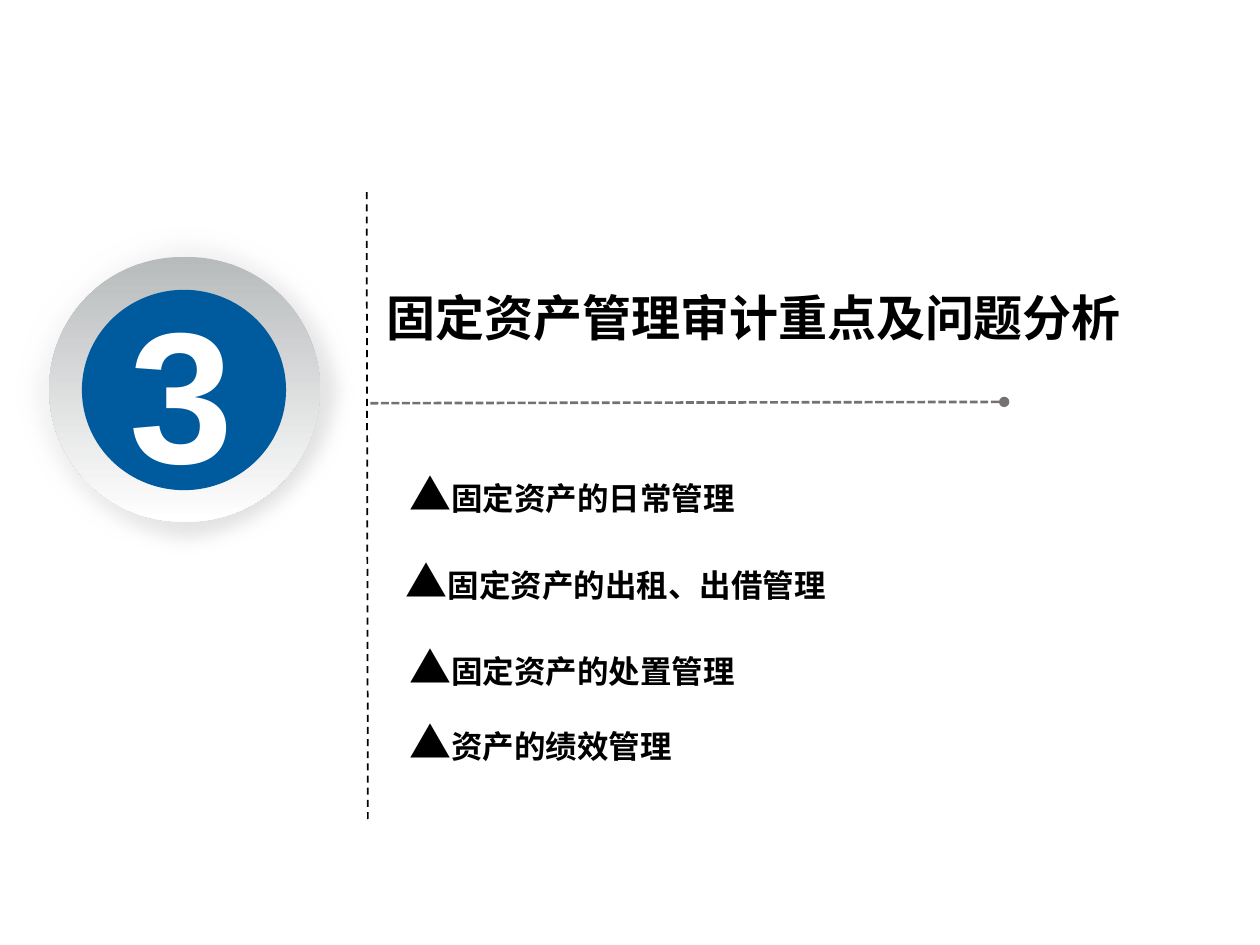
from lxml.etree import SubElement
from pptx import Presentation
from pptx.dml.color import RGBColor
from pptx.enum.dml import MSO_LINE as DASH
from pptx.enum.shapes import MSO_CONNECTOR as CONN, MSO_SHAPE as SHAPE
from pptx.enum.text import MSO_ANCHOR, MSO_AUTO_SIZE, PP_ALIGN
from pptx.oxml.ns import qn
from pptx.util import Emu, Pt

PX = 9144  # 100 px to the inch
THEME = {
    "black": "000000", "white": "FFFFFF", "blue": "005A9E", "grey": "767171",
    "halo": "D9D9D9", "ring": "B8BBBC",
    "latin": "Arial", "cjk": "Noto Sans CJK SC",
    "number": 106.7, "title": 28, "marker": 24, "item": 18,
}


def px(*lengths):
    return [Emu(n * PX) for n in lengths]


def write(sp, box, inset, runs, spacing=None):
    """Place a text shape and fill its one paragraph with (text, size, font, colour, bold) runs."""
    sp.left, sp.top, sp.width, sp.height = px(*box)
    tf = sp.text_frame
    tf.word_wrap = True
    tf.auto_size = MSO_AUTO_SIZE.NONE
    tf.vertical_anchor = MSO_ANCHOR.TOP
    tf.margin_left, tf.margin_top, tf.margin_right, tf.margin_bottom = px(*inset, *inset)
    p = tf.paragraphs[0]
    p.alignment = PP_ALIGN.LEFT
    if spacing:
        p.line_spacing = Pt(spacing)
    for text, size, font, colour, bold in runs:
        r = p.add_run()
        r.text = text
        r.font.size = Pt(THEME[size])
        r.font.bold = bold
        r.font.color.rgb = RGBColor.from_string(THEME[colour])
        r.font.name = THEME[font]
        SubElement(r.font._element, qn("a:ea"), typeface=THEME["cjk"])


prs = Presentation()
prs.slide_width, prs.slide_height = px(1000, 750)
s = prs.slides.add_slide(prs.slide_layouts[5])

write(s.shapes.title, (307, 219, 651, 56), (0, 0),
      [("固定资产管理审计重点及问题分析", "title", "latin", "black", True)], 40)

# Number badge: soft halo, shaded ring, solid disc
badge = s.shapes.add_group_shape()
discs = []
for kind, box, colours in [
    (SHAPE.OVAL, (12, 178, 269, 263), ("halo", "white")),
    (SHAPE.ROUNDED_RECTANGLE, (39, 204, 215, 210), ("ring", "white")),
    (SHAPE.OVAL, (65, 230, 162, 159), ("blue",)),
]:
    sp = badge.shapes.add_shape(kind, *px(*box))
    sp.shadow.inherit = False
    sp.line.fill.background()
    if len(colours) == 1:
        sp.fill.solid()
        sp.fill.fore_color.rgb = RGBColor.from_string(THEME[colours[0]])
    else:
        sp.fill.gradient()
        sp.fill.gradient_angle = 270
        for stop, position, colour in zip(sp.fill.gradient_stops, (0, 1), colours):
            stop.position = position
            stop.color.rgb = RGBColor.from_string(THEME[colour])
    discs.append(sp)
halo, ring, disc = discs
ring.adjustments[0] = 0.5

# The halo shades from its lower right corner and fades at the edge
spPr = halo._element.spPr
grad = spPr.find(qn("a:gradFill"))
grad.remove(grad.find(qn("a:lin")))
radial = SubElement(grad, qn("a:path"), path="circle")
SubElement(radial, qn("a:fillToRect"), l="100000", t="100000")
SubElement(spPr.find(qn("a:effectLst")), qn("a:softEdge"), rad="127000")

write(s.shapes.add_textbox(0, 0, 0, 0), (93, 215, 107, 188), (10, 5),
      [("3", "number", "latin", "white", True)])

for ends, colour, width, dash, tail in [
    ((292, 650, 291, 151), "black", 1, DASH.DASH, None),
    ((294, 320, 797, 319), "grey", 1.5, DASH.SQUARE_DOT, "oval"),
]:
    rule = s.shapes.add_connector(CONN.STRAIGHT, *px(*ends))
    rule.line.color.rgb = RGBColor.from_string(THEME[colour])
    rule.line.width = Pt(width)
    rule.line.dash_style = dash
    if tail:
        SubElement(rule.line._get_or_add_ln(), qn("a:tailEnd"), type=tail)
    SubElement(rule._element.spPr, qn("a:effectLst"))

for text, top, width, height, inset, spacing in [
    ("固定资产的日常管理", 357, 532, 60, (10, 5), 36),
    ("固定资产的出租、出借管理", 427, 582, 58, (7, 4), 36),
    ("固定资产的处置管理", 504, 581, 111, (10, 5), None),
    ("资产的绩效管理", 564, 581, 50, (10, 5), None),
]:
    write(s.shapes.add_textbox(0, 0, 0, 0), (315, top, width, height), inset,
          [("▲", "marker", "cjk", "black", False), (text, "item", "cjk", "black", True)], spacing)

prs.save("out.pptx")
